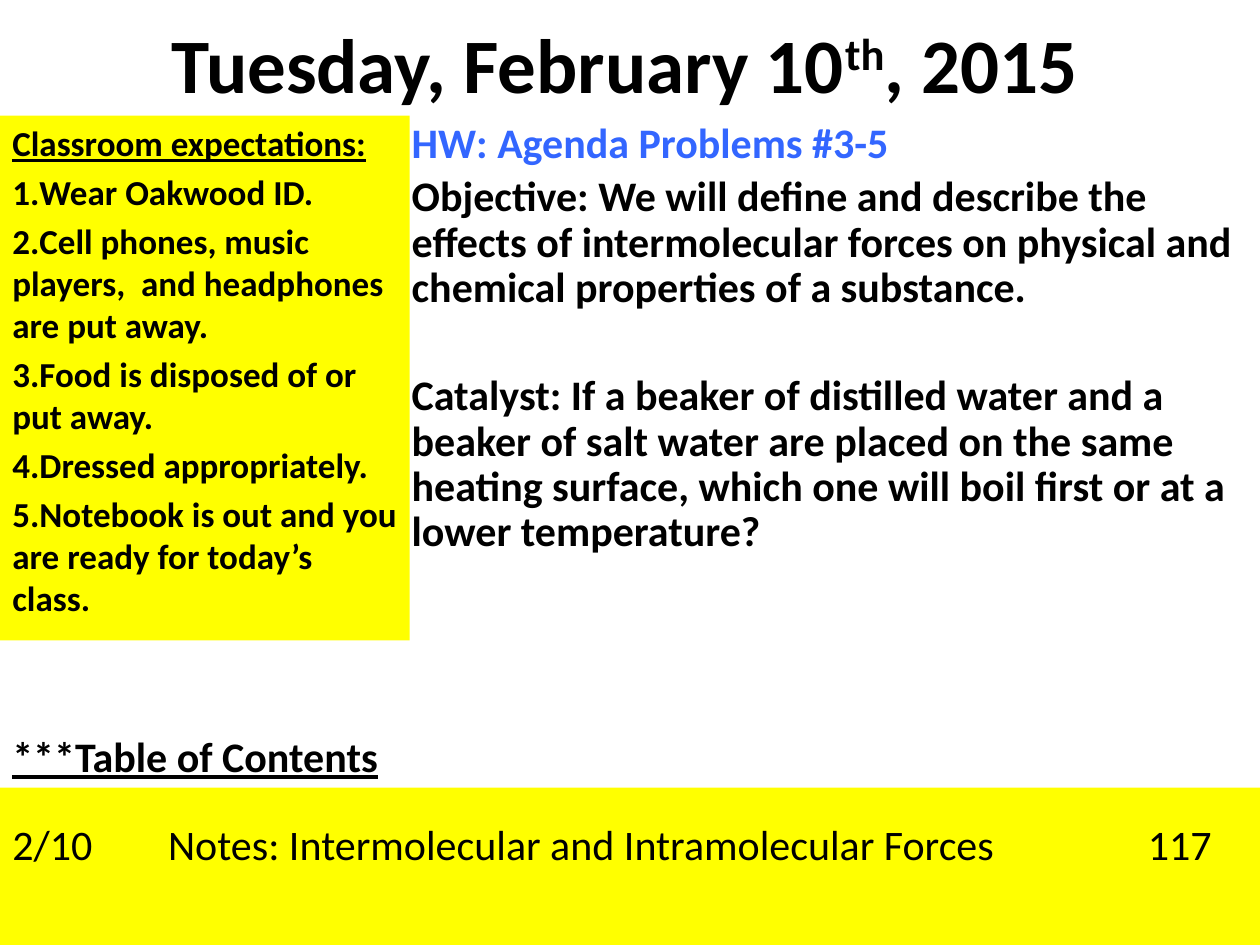
from lxml.etree import SubElement
from pptx import Presentation
from pptx.dml.color import RGBColor
from pptx.enum.shapes import MSO_SHAPE
from pptx.enum.text import MSO_ANCHOR, PP_ALIGN
from pptx.oxml.ns import qn
from pptx.util import Cm, Pt

COLORS = {"ink": "000000", "blue": "3366FF", "yellow": "FFFF00"}
RULES = [
    "Wear Oakwood ID.",
    "Cell phones, music players,  and headphones are put away.",
    "Food is disposed of or put away.",
    "Dressed appropriately.",
    "Notebook is out and you are ready for today’s class.",
]
GOAL = ("Objective: We will define and describe the effects of intermolecular "
        "forces on physical and chemical properties of a substance.")
TASK = ("Catalyst: If a beaker of distilled water and a beaker of salt water are "
        "placed on the same heating surface, which one will boil first or at a "
        "lower temperature?")


def rgb(name):
    return RGBColor.from_string(COLORS[name])


def add_box(slide, left, top, width, height, anchor=MSO_ANCHOR.TOP):
    box = slide.shapes.add_textbox(Cm(left), Cm(top), Cm(width), Cm(height))
    return set_frame(box, anchor)


def add_panel(slide, left, top, width, height, anchor=MSO_ANCHOR.TOP):
    panel = slide.shapes.add_shape(
        MSO_SHAPE.RECTANGLE, Cm(left), Cm(top), Cm(width), Cm(height))
    panel.shadow.inherit = False
    panel.fill.solid()
    panel.fill.fore_color.rgb = rgb("yellow")
    panel.line.fill.background()
    return set_frame(panel, anchor)


def set_frame(shape, anchor):
    frame = shape.text_frame
    frame.word_wrap = True
    frame.vertical_anchor = anchor
    return frame


def add_par(frame, align=PP_ALIGN.LEFT, before=0, line=None):
    first = frame.paragraphs[0]
    par = frame.add_paragraph() if first.runs else first
    par.alignment = align
    par.space_before = Pt(before)
    if line:
        par.line_spacing = line
    return par


def add_text(par, text, size=24, color="ink", bold=True, under=False, base=0):
    run = par.add_run()
    run.text = text
    font = run.font
    font.name = "Calibri"
    font.size = Pt(size)
    font.bold = bold
    font.underline = under
    font.color.rgb = rgb(color)
    if base:
        run._r.get_or_add_rPr().set("baseline", str(base * 1000))


def add_number(par):
    props = par._p.get_or_add_pPr()
    props.set("marL", "0")
    props.set("indent", "0")
    SubElement(props, qn("a:buFont"), typeface="+mj-lt")
    SubElement(props, qn("a:buAutoNum"), type="arabicPeriod")


def add_tabs(par, *stops):
    tabs = SubElement(par._p.get_or_add_pPr(), qn("a:tabLst"))
    for stop in stops:
        SubElement(tabs, qn("a:tab"), pos=str(Cm(stop)), algn="l")


def add_title(slide):
    frame = add_box(slide, 1.27, 0, 22.66, 2.33, MSO_ANCHOR.BOTTOM)
    par = add_par(frame, PP_ALIGN.CENTER)
    for text, base in (("Tuesday, February 10", 0), ("th", 30), (", 2015", 0)):
        add_text(par, text, size=44, base=base)


def add_lesson(slide):
    frame = add_box(slide, 8.05, 2.33, 17.35, 13.34)
    parts = (("HW: Agenda Problems #3-5", "blue", 4.8),
             (GOAL, "ink", 4.8), (TASK, "ink", 36))
    for text, color, before in parts:
        add_text(add_par(frame, before=before, line=0.9), text, color=color)


def add_rules(slide):
    frame = add_panel(slide, 0, 2.33, 8.26, 10.58)
    head = add_par(frame, before=4)
    add_text(head, "Classroom expectations:", size=20, under=True)
    for rule in RULES:
        par = add_par(frame, before=4)
        add_number(par)
        add_text(par, rule, size=20)


def add_contents(slide):
    frame = add_panel(slide, 0, 15.88, 25.4, 3.17)
    frame.margin_top = Cm(0.62)
    par = add_par(frame)
    add_tabs(par, 3.14, 22.89)
    add_text(par, "2/10\tNotes: Intermolecular and Intramolecular Forces\t117",
             bold=False)
    label = add_box(slide, 0, 14.6, 8.05, 1.3)
    add_text(add_par(label), "***Table of Contents", under=True)


def main():
    deck = Presentation()
    deck.slide_width, deck.slide_height = Cm(25.4), Cm(19.05)
    slide = deck.slides.add_slide(deck.slide_layouts[6])
    add_title(slide)
    add_lesson(slide)
    add_rules(slide)
    add_contents(slide)
    deck.save("out.pptx")


if __name__ == "__main__":
    main()
